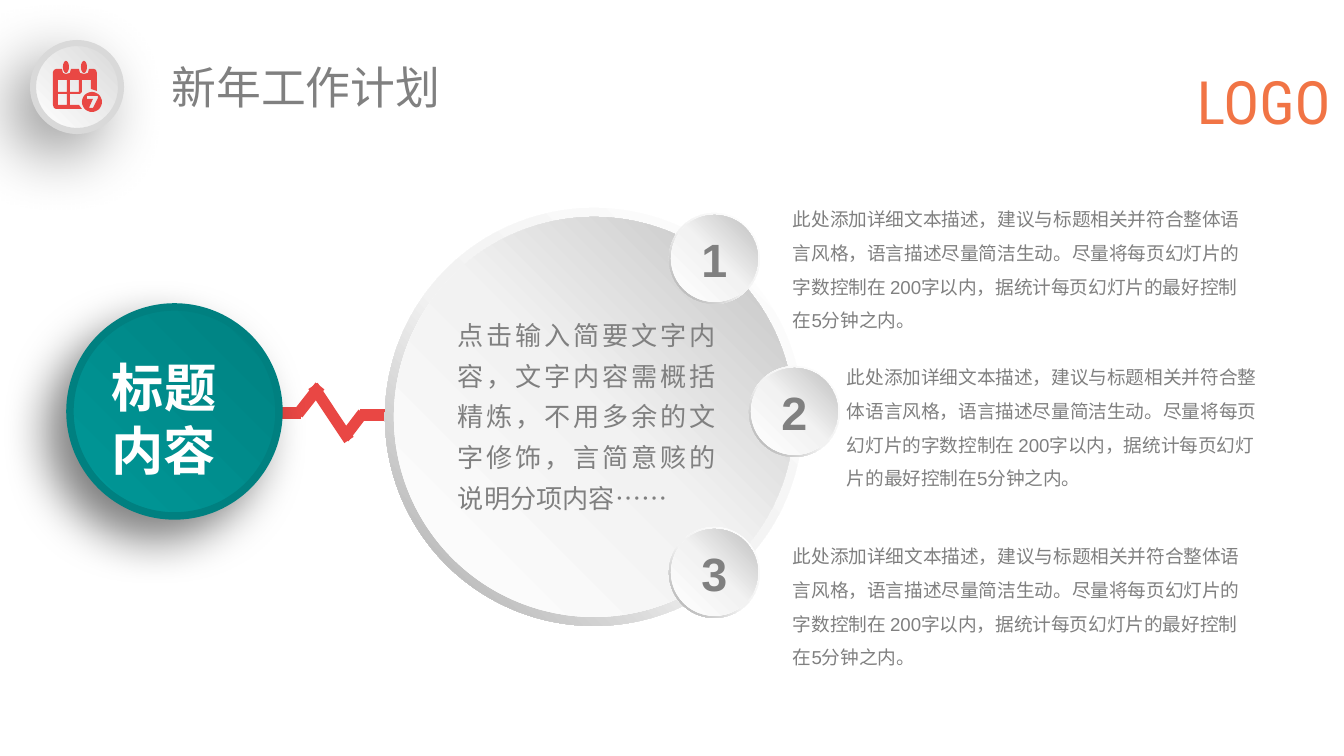
from math import cos, pi, sin

from lxml.etree import SubElement
from pptx import Presentation
from pptx.dml.color import RGBColor
from pptx.enum.shapes import MSO_CONNECTOR as Connector, MSO_SHAPE as Shape
from pptx.enum.text import MSO_ANCHOR as Anchor, PP_ALIGN as Align
from pptx.oxml.ns import qn
from pptx.util import Pt

PX = 9144000 / 1344
COLORS = {
    "grey": "808080", "white": "FFFFFF", "pale": "F2F2F2", "silver": "D9D9D9",
    "dim": "BFBFBF", "rim": "A6A6A6", "red": "E94744", "orange": "F17445",
    "teal": "009999", "deep_teal": "008080", "black": "000000",
}
BALL = [(0, "white"), (51, "pale"), (100, "dim")]
RIM = [(0, "white"), (55, "pale"), (100, "rim")]
DETAIL = ("此处添加详细文本描述，建议与标题相关并符合整体语言风格，语言描述尽量简洁生动。"
          "尽量将每页幻灯片的字数控制在 200字以内，据统计每页幻灯片的最好控制在5分钟之内。")
SUMMARY = "点击输入简要文字内容，文字内容需概括精炼，不用多余的文字修饰，言简意赅的说明分项内容……"


def px(*lengths):
    return [round(length * PX) for length in lengths]


def rgb(name):
    return RGBColor.from_string(COLORS[name])


def write(frame, text, size, color="grey", bold=False, align=Align.LEFT,
          spacing=None, font="Arial", inset=None):
    frame.word_wrap = True
    if inset is not None:
        frame.margin_left = frame.margin_right = inset
        frame.margin_top = frame.margin_bottom = inset
    frame.text = text
    paragraph = frame.paragraphs[0]
    paragraph.alignment = align
    if spacing:
        paragraph.line_spacing = spacing
    paragraph.font.name = font
    paragraph.font.size = Pt(size)
    paragraph.font.bold = bold
    paragraph.font.color.rgb = rgb(color)


def add_text(slide, box, text, size, **style):
    frame = slide.shapes.add_textbox(*px(*box)).text_frame
    write(frame, text, size, **style)


def add_round(slide, kind, box, stops, angle):
    shape = slide.shapes.add_shape(kind, *px(*box))
    shape.shadow.inherit = False
    shape.line.fill.background()
    shape.fill.gradient()
    shape.fill.gradient_angle = angle
    stop_list = shape._element.spPr.find(".//" + qn("a:gsLst"))
    stop_list.clear()
    for position, color in stops:
        stop = SubElement(stop_list, qn("a:gs"), pos=str(position * 1000))
        SubElement(stop, qn("a:srgbClr"), val=COLORS[color])
    return shape


def add_shadow(shape, opacity, blur):
    effects = shape._element.spPr.find(qn("a:effectLst"))
    shadow = SubElement(effects, qn("a:outerShdw"), blurRad=str(Pt(blur)),
                        dist=str(Pt(15)), dir="8100000", algn="tr", rotWithShape="0")
    color = SubElement(shadow, qn("a:srgbClr"), val=COLORS["black"])
    SubElement(color, qn("a:alpha"), val=str(opacity * 1000))


def add_button(slide, box, stops, edge, width, opacity, blur):
    button = add_round(slide, Shape.OVAL, box, stops, 45)
    button.line.color.rgb = rgb(edge)
    button.line.width = Pt(width)
    add_shadow(button, opacity, blur)


def add_ball(slide, left, top, size, rim):
    donut = add_round(slide, Shape.DONUT, (left, top, size, size), RIM, 225)
    donut.adjustments[0] = 0.049
    inner = size - 2 * rim
    return add_round(slide, Shape.OVAL, (left + rim, top + rim, inner, inner), BALL, 45)


def oval(x, y, radius_x, radius_y):
    turns = [2 * pi * step / 32 for step in range(32)]
    return [(x + radius_x * cos(turn), y + radius_y * sin(turn)) for turn in turns]


def pane(x, y, width, height):
    return [(x, y), (x + width, y), (x + width, y + height), (x, y + height)]


def add_calendar(slide, left, top):
    body = [(0, 10), (1, 8), (3, 7), (9, 7), (10, 11), (13, 12), (17, 11), (18, 7),
            (26, 7), (27, 11), (31, 12), (35, 11), (36, 7), (41, 7), (43, 8), (44, 11),
            (44, 29), (38, 27), (38, 18), (29, 18), (29, 30), (27, 32), (17, 32),
            (17, 43), (26, 43), (29, 47), (3, 47), (1, 46), (0, 43)]
    seven = [(34, 34), (45, 34), (45, 36), (40, 46), (36, 46), (40, 37), (34, 37)]
    contours = [body, oval(13, 5, 3, 6), oval(31, 5, 3, 6),
                pane(5, 18, 9, 12), pane(17, 18, 9, 12), pane(5, 32, 9, 11),
                oval(39, 40, 10, 10), seven]
    builder = None
    for contour in contours:
        points = [((left + x) * 10, (top + y) * 10) for x, y in contour]
        if builder is None:
            builder = slide.shapes.build_freeform(*points[0], scale=PX / 10)
        else:
            builder.move_to(*points[0])
        builder.add_line_segments(points[1:], close=True)
    icon = builder.convert_to_shape()
    icon.shadow.inherit = False
    icon.fill.solid()
    icon.fill.fore_color.rgb = rgb("red")
    icon.line.fill.background()


def add_header(slide, left, top):
    add_text(slide, (left + 1164, top + 22, 147, 72), "LOGO", 32,
             color="orange", font="Roboto Condensed", inset=0)
    title = slide.shapes.title
    title.left, title.top, title.width, title.height = px(left + 125, top + 10, 347, 68)
    title.text_frame.vertical_anchor = Anchor.TOP
    write(title.text_frame, "新年工作计划", 24)
    add_button(slide, (left, top, 88, 88), [(0, "white"), (100, "silver")],
               "silver", 3.25, 40, 35)
    add_calendar(slide, left + 20, top + 19)


def add_pulse(slide, left, top):
    segments = [(0, 27, 66, 27), (125, 29, 180, 29), (63, 28, 85, 0),
                (109, 52, 128, 27), (114, 54, 78, 0)]
    for x1, y1, x2, y2 in segments:
        line = slide.shapes.add_connector(
            Connector.STRAIGHT, *px(left + x1, top + y1, left + x2, top + y2))
        line.line.color.rgb = rgb("red")
        line.line.width = Pt(6)
        SubElement(line._element.spPr, qn("a:effectLst"))


def add_topic(slide, left, top):
    add_button(slide, (left, top, 209, 209), [(0, "teal"), (100, "deep_teal")],
               "deep_teal", 4, 50, 25)
    add_text(slide, (left + 32, top + 48, 124, 126), "标题内容", 28,
             color="white", bold=True, align=Align.CENTER, inset=0)


def add_plan(slide, left, top):
    add_ball(slide, left, top, 418, 9)
    items = [(284, 5, 408, -11, 450), (364, 158, 462, 147, 412), (284, 319, 408, 326, 461)]
    for number, (x, y, text_x, text_y, width) in enumerate(items, 1):
        ball = add_ball(slide, left + x, top + y, 91, 2)
        ball.text_frame.vertical_anchor = Anchor.MIDDLE
        write(ball.text_frame, str(number), 25, bold=True, align=Align.CENTER)
        add_text(slide, (left + text_x, top + text_y, width, 136), DETAIL, 10,
                 spacing=1.5, inset=0)
    add_text(slide, (left + 73, top + 102, 258, 206), SUMMARY, 14,
             align=Align.JUSTIFY, spacing=1.3, inset=0)


def main():
    presentation = Presentation()
    presentation.slide_width, presentation.slide_height = px(1344, 756)
    slide = presentation.slides.add_slide(presentation.slide_layouts[5])
    add_header(slide, 33, 43)
    add_pulse(slide, 235, 386)
    add_topic(slide, 70, 307)
    add_plan(slide, 385, 208)
    presentation.save("out.pptx")


if __name__ == "__main__":
    main()
